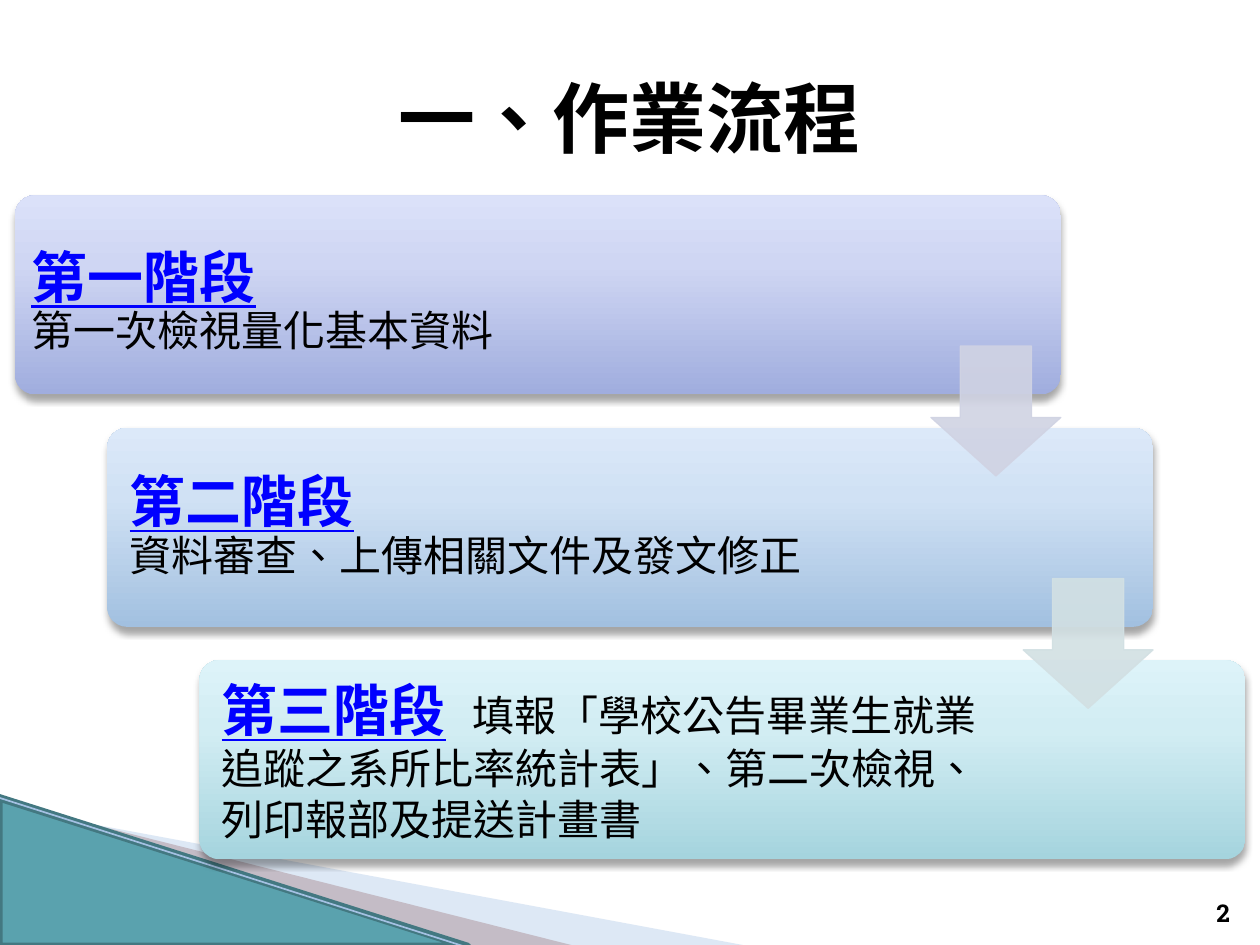
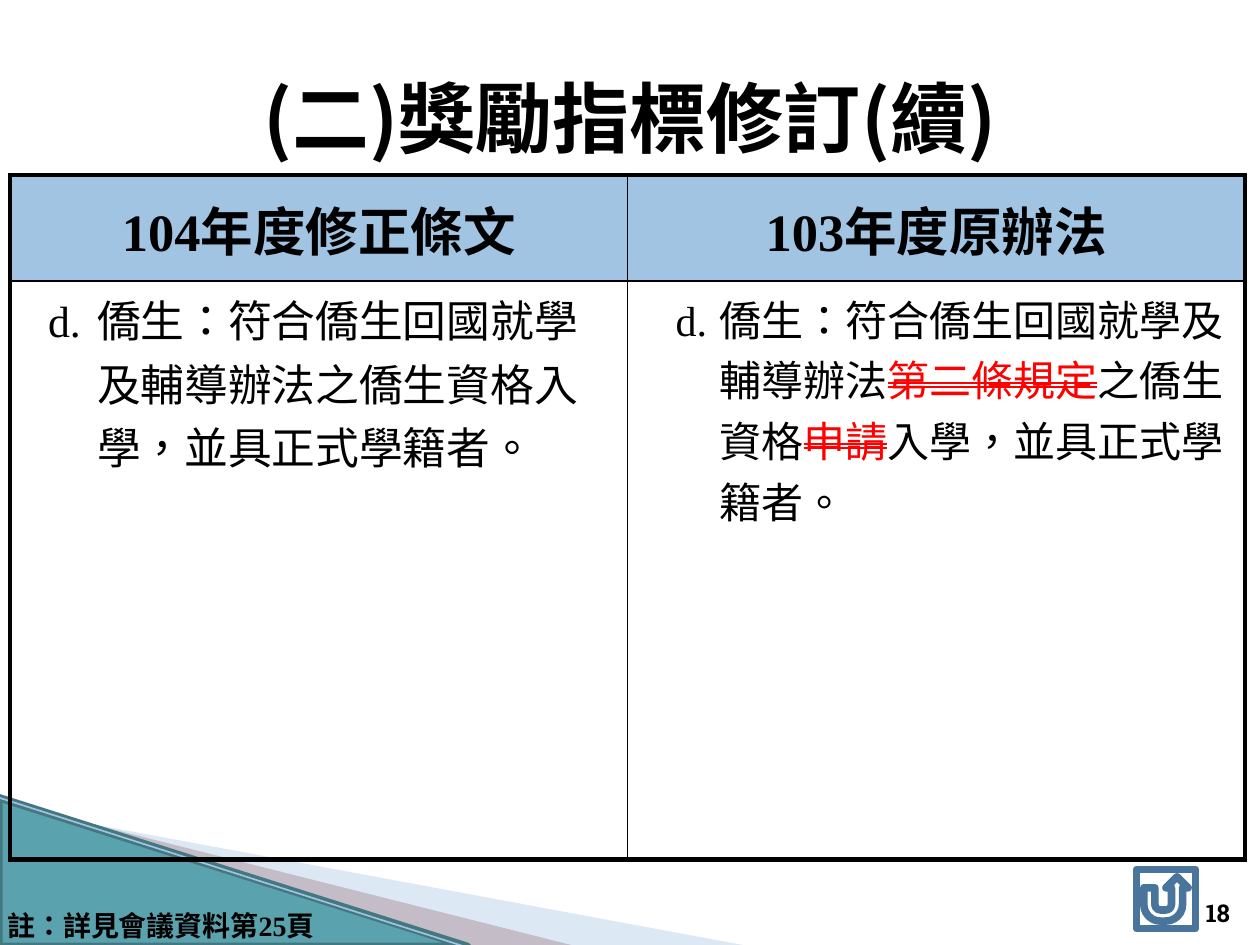
import pptx
import pptx.dml.color
import pptx.enum.shapes
import pptx.enum.text
import pptx.oxml
import pptx.oxml.ns
import pptx.util
from lxml import etree

Pt = pptx.util.Pt
RGBColor = pptx.dml.color.RGBColor
SHAPE = pptx.enum.shapes.MSO_SHAPE
ALIGN = pptx.enum.text.PP_ALIGN
ANCHOR = pptx.enum.text.MSO_ANCHOR
qn = pptx.oxml.ns.qn

BLACK = RGBColor(0x00, 0x00, 0x00)
RED = RGBColor(0xFF, 0x00, 0x00)
LINK_BLUE = RGBColor(0x00, 0x00, 0xFF)
TEAL = RGBColor(0x5A, 0xA2, 0xAE)
DARK_TEAL = RGBColor(0x43, 0x78, 0x81)
PALE_BLUE = RGBColor(0xAB, 0xC6, 0xE6)
EDGE_BLUE = RGBColor(0xA4, 0xC1, 0xE3)
MAUVE = RGBColor(0xC4, 0xBC, 0xC6)
HEADER_BLUE = RGBColor(0xA1, 0xC4, 0xE3)
BUTTON_BLUE = RGBColor(0x49, 0x74, 0x9B)
ARROW_LILAC = RGBColor(0xD0, 0xD3, 0xE3)
ARROW_GREEN = RGBColor(0xD2, 0xE0, 0xE3)

SERIF = "Times New Roman"
SANS = "Noto Sans CJK SC"
SLAB = "Roboto Slab"

# Spans are (text, format) pairs; a "\n" span is a line break.
STAGE_NAME = dict(size=32, color=LINK_BLUE, bold=True, underline=True)
STAGE_TEXT = dict(size=24)
STAGES = [
    dict(
        spans=[("第一階段", STAGE_NAME), ("\n", {}),
               ("第一次檢視量化基本資料", STAGE_TEXT)],
        gradient=[(0, "A0ADDE"), (65, "CFD6F3"), (100, "DBE1F9")],
        insets=(6, 18, 0, 9), spacing=0.9,
    ),
    dict(
        spans=[("第二階段", STAGE_NAME), ("\n", {}),
               ("資料審查、上傳相關文件及發文修正", STAGE_TEXT)],
        gradient=[(0, "A2C0E0"), (65, "D0E1F4"), (100, "DCE9F9")],
        insets=(9.4, 9.4, 9.4, 9.4), spacing=0.9,
    ),
    dict(
        spans=[("第三階段", STAGE_NAME), (" ", dict(size=32, bold=True, tracking=8)),
               ("填報「學校公告畢業生就業追蹤之系所比率統計表」、"
                "第二次檢視、列印報部及提送計畫書", STAGE_TEXT)],
        gradient=[(0, "A5D4DE"), (65, "D2EDF3"), (100, "DDF3F9")],
        insets=(9.4, 9.4, 9.4, 9.4), spacing=1.0,
    ),
]
ARROW_COLORS = [ARROW_LILAC, ARROW_GREEN]

DELETED = dict(size=24, color=RED, strike=True)
KEPT = dict(size=24)
HEADERS = ["104年度修正條文", "103年度原辦法"]
CLAUSES = [
    dict(spans=[("d.\t僑生：符合僑生回國就學及輔導辦法之僑生資格入學，並具正式學籍者。",
                 dict(size=25))],
         margin=42.5, hanging=28),
    dict(spans=[("d.\t僑生：符合僑生回國就學及輔導辦法", KEPT), ("第二條規定", DELETED),
                ("之僑生資格", KEPT), ("申請", DELETED),
                ("入學，並具正式學籍者。", KEPT)],
         margin=45.4, hanging=25.2),
]


def add_xml(parent, tag, **attributes):
    return etree.SubElement(parent, qn(tag), attributes)


def add_span(para, text, size=24, color=BLACK, bold=False, underline=False,
             strike=False, tracking=0, font=SERIF):
    if text == "\n":
        para.add_line_break()
        return
    span = para.add_run()
    span.text = text
    span.font.size = Pt(size)
    span.font.bold = bold
    span.font.underline = underline
    span.font.color.rgb = color
    span.font.name = font
    properties = span.font._element
    properties.set("lang", "zh-TW")
    if strike:
        properties.set("strike", "dblStrike")
    if tracking:
        properties.set("spc", str(tracking * 100))
    add_xml(properties, "a:ea", typeface=SANS)


def write_text(frame, spans, align=ALIGN.LEFT, anchor=ANCHOR.TOP, spacing=None,
               insets=None, **text_format):
    """Fill a frame with one paragraph; spans is a string or (text, format) pairs."""
    if isinstance(spans, str):
        spans = [(spans, text_format)]
    frame.word_wrap = True
    frame.vertical_anchor = anchor
    if insets:
        (frame.margin_left, frame.margin_top,
         frame.margin_right, frame.margin_bottom) = map(Pt, insets)
    para = frame.paragraphs[0]
    para.alignment = align
    if spacing:
        para.line_spacing = spacing
    for text, span_format in spans:
        add_span(para, text, **span_format)
    return para


def add_text(page, place, spans, **text_format):
    box = page.shapes.add_textbox(*map(Pt, place))
    write_text(box.text_frame, spans, **text_format)


def set_opacity(shape, percent):
    """Apply the opacity to the solid fill and to the outline, if it has a colour."""
    for color in shape._element.spPr.iter(qn("a:srgbClr")):
        add_xml(color, "a:alpha", val=str(percent * 1000))


def style_shape(shape, fill=None, line=None, width=0.75):
    shape.shadow.inherit = False
    if fill is None:
        shape.fill.background()
    else:
        shape.fill.solid()
        shape.fill.fore_color.rgb = fill
    if line is None:
        shape.line.fill.background()
    else:
        shape.line.color.rgb = line
        shape.line.width = Pt(width)
    return shape


def add_shape(page, kind, place, **style):
    return style_shape(page.shapes.add_shape(kind, *map(Pt, place)), **style)


def add_sliver(page, points, fill):
    corners = [(Pt(x), Pt(y)) for x, y in points]
    builder = page.shapes.build_freeform(*corners[0], scale=1.0)
    builder.add_line_segments(corners[1:], close=True)
    return style_shape(builder.convert_to_shape(), fill=fill)


def add_corner_band(page):
    pale = add_sliver(page, [(39.6, 468.5), (428.4, 540.7), (328.3, 540.7),
                             (39.6, 468)], PALE_BLUE)
    set_opacity(pale, 40)
    add_sliver(page, [(38.2, 467.3), (329, 540.7), (267.8, 541.4), (38.9, 468)], MAUVE)
    add_shape(page, SHAPE.RIGHT_TRIANGLE, (-0.7, 455.8, 267.8, 85),
              fill=TEAL, line=DARK_TEAL, width=4.33)
    edge = page.shapes.add_connector(pptx.enum.shapes.MSO_CONNECTOR.STRAIGHT,
                                     Pt(-0.7), Pt(455.8), Pt(267.1), Pt(541.4))
    edge.line.color.rgb = EDGE_BLUE
    edge.line.width = Pt(0.95)
    add_xml(edge._element.spPr, "a:effectLst")


def add_page(deck, title, number, title_font):
    page = deck.slides.add_slide(deck.slide_layouts[5])
    add_corner_band(page)
    heading = page.shapes.title
    heading.left, heading.top, heading.width, heading.height = map(Pt, (0, 21.6, 720, 90))
    write_text(heading.text_frame, title, align=ALIGN.CENTER, anchor=ANCHOR.MIDDLE,
               size=44, bold=True, font=title_font)
    add_text(page, (666, 504.7, 44, 28.8), number, align=ALIGN.RIGHT,
             anchor=ANCHOR.BOTTOM, size=14, bold=True, font=SLAB)
    return page


def set_gradient(shape, stops):
    """Run the stops from the bottom edge to the top edge."""
    properties = shape._element.spPr
    properties.remove(properties.find(qn("a:noFill")))
    gradient = etree.Element(qn("a:gradFill"), rotWithShape="1")
    stop_list = add_xml(gradient, "a:gsLst")
    for position, color in stops:
        stop = add_xml(stop_list, "a:gs", pos=str(position * 1000))
        add_xml(stop, "a:srgbClr", val=color)
    add_xml(gradient, "a:lin", ang=str(270 * 60000), scaled="0")
    properties.find(qn("a:prstGeom")).addnext(gradient)


def add_drop_shadow(shape):
    effects = shape._element.spPr.find(qn("a:effectLst"))
    shadow = add_xml(effects, "a:outerShdw", blurRad=str(Pt(4)), dist=str(Pt(3)),
                     dir=str(90 * 60000), rotWithShape="0")
    color = add_xml(shadow, "a:srgbClr", val=str(BLACK))
    add_xml(color, "a:alpha", val="35000")


def add_stages(page):
    width, height, arrow_size, pad = 597.6, 113.8, 74.2, 3.3
    corners = [(8.6 + 52.7 * i, 111.6 + 132.8 * i) for i in range(len(STAGES))]
    for (left, top), stage in zip(corners, STAGES):
        box = add_shape(page, SHAPE.ROUNDED_RECTANGLE, (left, top, width, height))
        box.adjustments[0] = 0.1
        set_gradient(box, stage["gradient"])
        add_drop_shadow(box)
        add_text(page, (left + pad, top + pad, 464.4, height - 2 * pad), stage["spans"],
                 anchor=ANCHOR.MIDDLE, insets=stage["insets"], spacing=stage["spacing"])
    for (left, top), color in zip(corners, ARROW_COLORS):
        arrow = add_shape(page, SHAPE.DOWN_ARROW,
                          (left + width - arrow_size, top + 86.2, arrow_size, arrow_size),
                          fill=color, line=color)
        arrow.adjustments[0], arrow.adjustments[1] = 0.55, 0.45
        set_opacity(arrow, 90)


def set_borders(cell, widths):
    properties = cell._tc.get_or_add_tcPr()
    for index, (side, width) in enumerate(widths.items()):
        border = etree.Element(qn("a:ln" + side), w=str(Pt(width)))
        add_xml(add_xml(border, "a:solidFill"), "a:srgbClr", val=str(BLACK))
        properties.insert(index, border)


def add_comparison(page):
    table = page.shapes.add_table(2, 2, Pt(5.8), Pt(100.1), Pt(705.6), Pt(391)).table
    table.first_row = table.horz_banding = False
    table.rows[0].height, table.rows[1].height = Pt(60.5), Pt(330.5)
    for column, (header, clause) in enumerate(zip(HEADERS, CLAUSES)):
        top, body = table.cell(0, column), table.cell(1, column)
        write_text(top.text_frame, header, align=ALIGN.CENTER, size=30, bold=True)
        top.vertical_anchor = ANCHOR.MIDDLE
        top.fill.solid()
        top.fill.fore_color.rgb = HEADER_BLUE
        para = write_text(body.text_frame, clause["spans"])
        indents = para._p.get_or_add_pPr()
        indents.set("marL", str(Pt(clause["margin"])))
        indents.set("indent", str(-Pt(clause["hanging"])))
        body.fill.background()
        for row, cell in enumerate((top, body)):
            set_borders(cell, {"L": 1 if column else 3, "R": 3 if column else 1,
                               "T": 1 if row else 3, "B": 3 if row else 1})


def main():
    deck = pptx.Presentation()
    deck.slide_width, deck.slide_height = Pt(720), Pt(540)

    workflow = add_page(deck, "一、作業流程", "2", SERIF)
    add_stages(workflow)

    revision = add_page(deck, "(二)獎勵指標修訂(續)", "18", SANS)
    add_text(revision, (-2.9, 515.5, 226.8, 26.6), "註：詳見會議資料第25頁",
             size=16, bold=True)
    add_comparison(revision)
    add_shape(revision, SHAPE.ACTION_BUTTON_RETURN, (649.4, 496.8, 33.8, 33.8),
              line=BUTTON_BLUE, width=4.33)

    deck.save("out.pptx")


if __name__ == "__main__":
    main()
